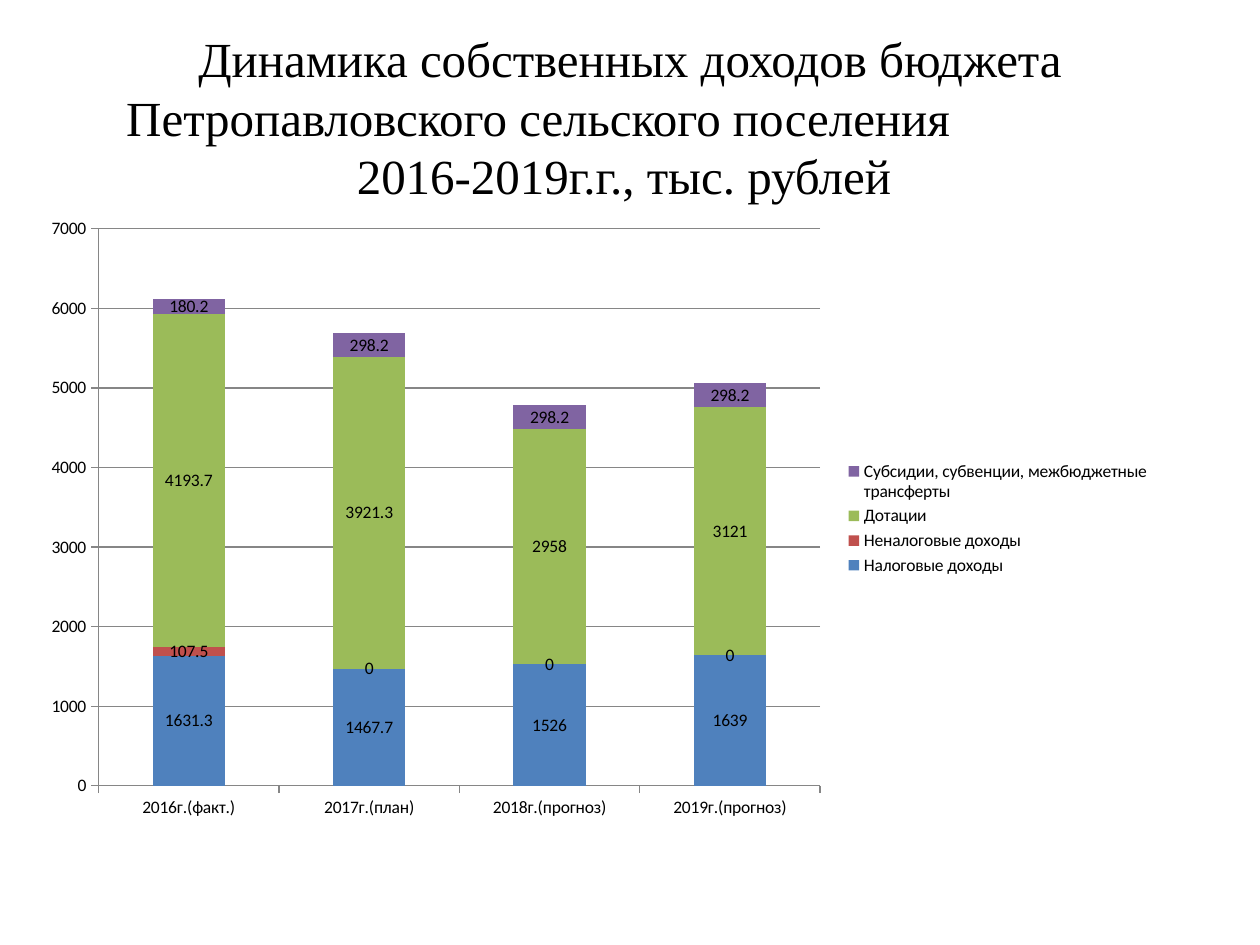
"""Builds a slide with a stacked column chart of settlement budget revenues."""
from dataclasses import dataclass

from pptx import Presentation
from pptx.chart.data import CategoryChartData
from pptx.dml.color import RGBColor
from pptx.enum.chart import XL_CHART_TYPE as ChartType, XL_LEGEND_POSITION as LegendPosition
from pptx.enum.chart import XL_TICK_MARK as TickMark
from pptx.enum.text import MSO_ANCHOR as Anchor, MSO_AUTO_SIZE as AutoSize, PP_ALIGN as Align
from pptx.util import Pt

TITLE_LINES = [
    ("Динамика собственных доходов бюджета", 0),
    ("Петропавловского сельского поселения", 105),
    ("2016-2019г.г., тыс. рублей", 7),
]
YEARS = ["2016г.(факт.)", "2017г.(план)", "2018г.(прогноз)", "2019г.(прогноз)"]
REVENUES = [
    ("Налоговые доходы", [1631.3, 1467.7, 1526, 1639], "4F81BD"),
    ("Неналоговые доходы", [107.5, 0, 0, 0], "C0504D"),
    ("Дотации", [4193.7, 3921.3, 2958, 3121], "9BBB59"),
    ("Субсидии, субвенции, межбюджетные трансферты", [180.2, 298.2, 298.2, 298.2], "8064A2"),
]


def color(value):
    return RGBColor.from_string(value)


def format_font(font, name, size, ink):
    font.name = name
    font.size = Pt(size)
    font.bold = False
    font.color.rgb = color(ink)


def add_text(para, text, *, font, size, ink, align, right_indent=0):
    para.alignment = align
    if right_indent:
        para._p.get_or_add_pPr().set("marR", str(Pt(right_indent)))
    span = para.add_run()
    span.text = text
    format_font(span.font, font, size, ink)


@dataclass
class SlideBuilder:
    page: object
    title_font: str = "Times New Roman"
    chart_font: str = "Calibri"
    ink: str = "000000"
    axis_line: str = "868686"

    def title(self, lines, left, top, width, height):
        box = self.page.shapes.title
        box.left, box.top, box.width, box.height = map(Pt, (left, top, width, height))
        frame = box.text_frame
        frame.word_wrap = True
        frame.auto_size = AutoSize.NONE
        frame.vertical_anchor = Anchor.MIDDLE
        for index, (text, indent) in enumerate(lines):
            para = frame.add_paragraph() if index else frame.paragraphs[0]
            add_text(para, text, font=self.title_font, size=28, ink=self.ink,
                     align=Align.CENTER, right_indent=indent)

    def stacked_columns(self, categories, rows, left, top, width, height):
        data = CategoryChartData()
        data.categories = categories
        for name, values, _ in rows:
            data.add_series(name, values)
        chart = self.page.shapes.add_chart(
            ChartType.COLUMN_STACKED, *map(Pt, (left, top, width, height)), data).chart
        format_font(chart.font, self.chart_font, 10, self.ink)
        chart.has_title = False
        chart.has_legend = True
        chart.legend.position = LegendPosition.RIGHT
        chart.legend.include_in_layout = False

        plot = chart.plots[0]
        plot.gap_width = 150
        plot.overlap = 100
        plot.vary_by_categories = False
        for series, (_, _, fill) in zip(plot.series, rows):
            series.format.fill.solid()
            series.format.fill.fore_color.rgb = color(fill)
            series.data_labels.show_value = True
        self.axes(chart)

    def axes(self, chart):
        value_axis = chart.value_axis
        value_axis.minimum_scale = 0
        value_axis.maximum_scale = 7000
        value_axis.major_unit = 1000
        value_axis.has_major_gridlines = True
        for axis in (chart.category_axis, value_axis):
            axis.major_tick_mark = TickMark.OUTSIDE
            axis.minor_tick_mark = TickMark.NONE
        for part in (chart.category_axis, value_axis, value_axis.major_gridlines):
            part.format.line.color.rgb = color(self.axis_line)
            part.format.line.width = Pt(0.75)


def main():
    deck = Presentation()
    deck.slide_width, deck.slide_height = Pt(720), Pt(540)
    builder = SlideBuilder(deck.slides.add_slide(deck.slide_layouts[5]))
    builder.title(TITLE_LINES, 36, 21.6, 648, 90)
    builder.stacked_columns(YEARS, REVENUES, 16.5, 118, 648, 356.5)
    deck.save("out.pptx")


if __name__ == "__main__":
    main()
